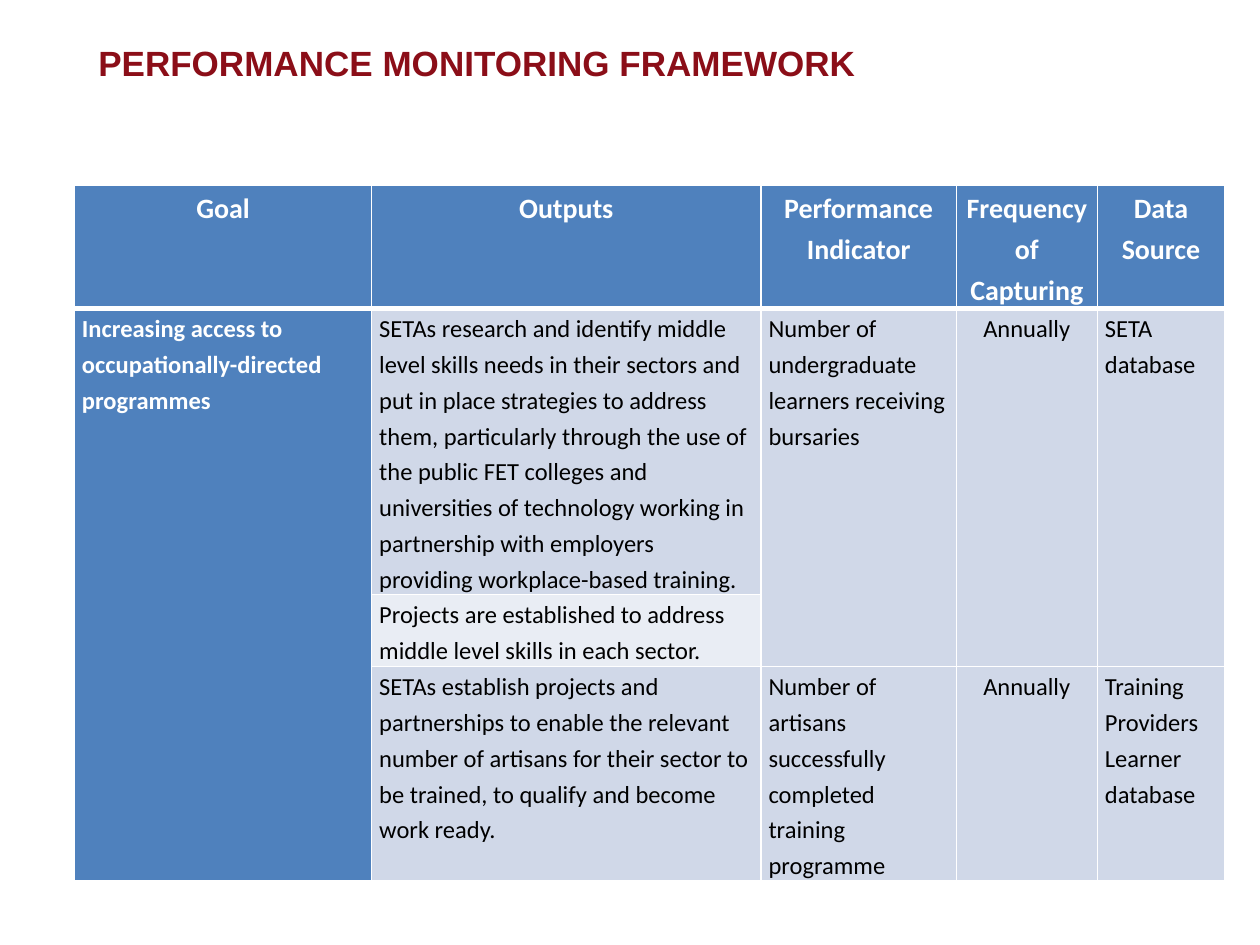
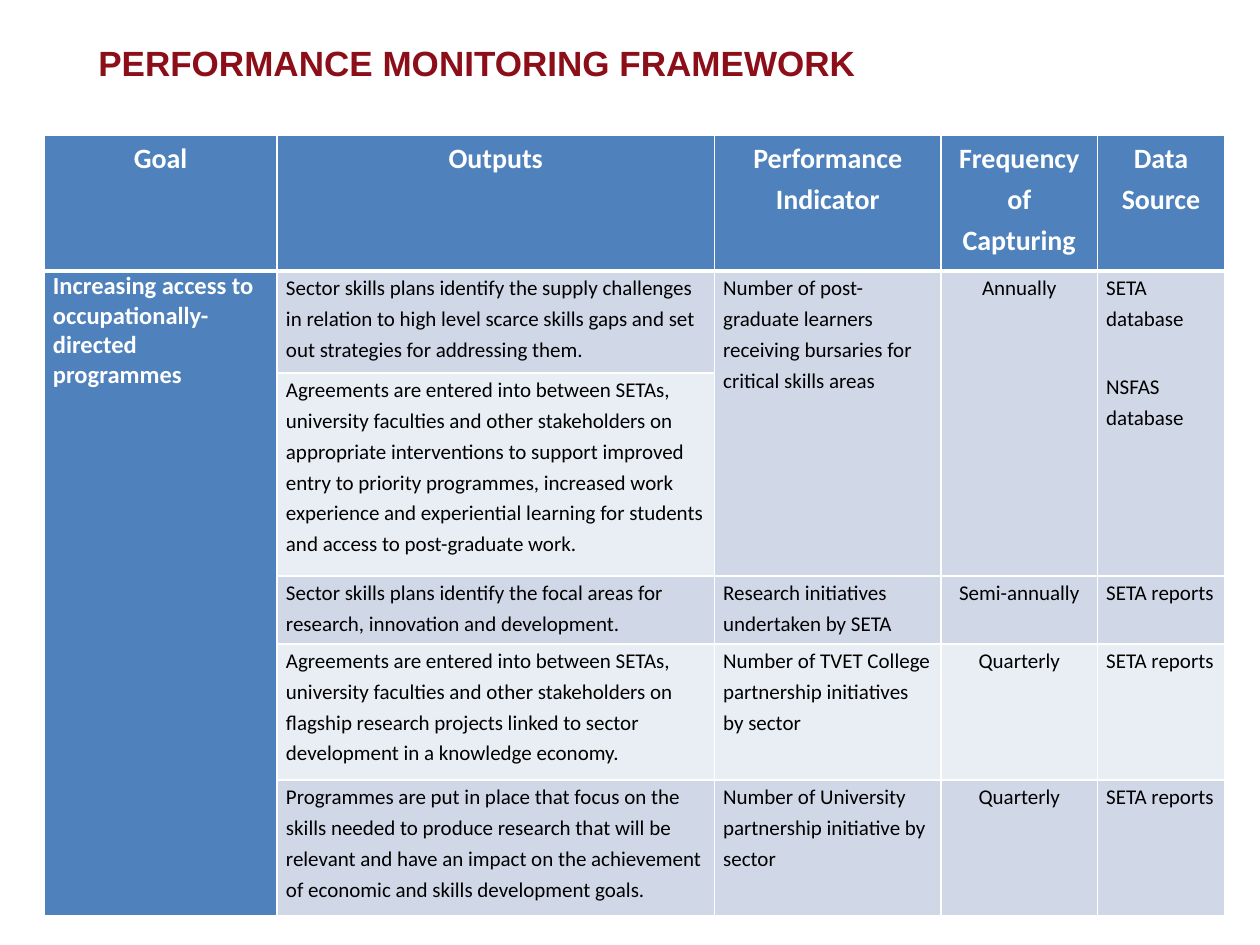
from lxml import etree
from pptx import Presentation, util as u
from pptx.dml.color import RGBColor
from pptx.enum import text
from pptx.oxml import ns

WHITE, BLACK, MAROON, BLUE = "FFFFFF", "000000", "8B0E18", "4F81BD"
BANDS = ["E9EDF4", "D0D8E8"]
TITLE = "PERFORMANCE MONITORING FRAMEWORK"
HEADINGS = ["Goal", "Outputs", "Performance Indicator", "Frequency of Capturing", "Data Source"]
GOAL = "Increasing access to occupationally-directed programmes"
GOAL_COLUMN, FREQUENCY_COLUMN = 0, 3
TITLE_ONLY = 5

ARTISAN_ROWS = [
    [GOAL,
     "SETAs research and identify middle level skills needs in their sectors and put in place "
     "strategies to address them, particularly through the use of the public FET colleges and "
     "universities of technology working in partnership with employers providing "
     "workplace-based training.",
     "Number of undergraduate learners receiving bursaries", "Annually", "SETA database"],
    ["", "Projects are established to address middle level skills in each sector.", "", "", ""],
    ["",
     "SETAs establish projects and partnerships to enable the relevant number of artisans for "
     "their sector to be trained, to qualify and become work ready.",
     "Number of artisans successfully completed training programme", "Annually",
     "Training Providers Learner database"],
]

RESEARCH_ROWS = [
    [GOAL,
     "Sector skills plans identify the supply challenges in relation to high level scarce "
     "skills gaps and set out strategies for addressing them.",
     "Number of post-graduate learners receiving bursaries for critical skills areas",
     "Annually", "SETA database\nNSFAS database"],
    ["",
     "Agreements are entered into between SETAs, university faculties and other stakeholders "
     "on appropriate interventions to support improved entry to priority programmes, increased "
     "work experience and experiential learning for students and access to post-graduate work.",
     "", "", ""],
    ["", "Sector skills plans identify the focal areas for research, innovation and development.",
     "Research initiatives undertaken by SETA", "Semi-annually", "SETA reports"],
    ["",
     "Agreements are entered into between SETAs, university faculties and other stakeholders "
     "on flagship research projects linked to sector development in a knowledge economy.",
     "Number of TVET College partnership initiatives by sector", "Quarterly", "SETA reports"],
    ["",
     "Programmes are put in place that focus on the skills needed to produce research that "
     "will be relevant and have an impact on the achievement of economic and skills "
     "development goals.",
     "Number of University partnership initiative by sector", "Quarterly", "SETA reports"],
]


def color(hex_string):
    return RGBColor.from_string(hex_string)


def style_font(font, name, size, hex_string, bold):
    font.name, font.size, font.bold = name, u.Pt(size), bold
    font.color.rgb = color(hex_string)


def add_title(slide, width):
    title = slide.shapes.title
    title.left, title.top = u.Inches(0.68), u.Inches(0.27)
    title.width, title.height = u.Inches(width), u.Inches(0.45)
    frame = title.text_frame
    frame.text = TITLE
    frame.vertical_anchor = text.MSO_ANCHOR.MIDDLE
    paragraph = frame.paragraphs[0]
    paragraph.alignment = text.PP_ALIGN.LEFT
    style_font(paragraph.runs[0].font, "Arial", 20, MAROON, True)


def set_borders(cell, row):
    properties = cell._tc.get_or_add_tcPr()
    widths = {"a:lnL": 1, "a:lnR": 1, "a:lnT": 3 if row == 1 else 1, "a:lnB": 3 if row == 0 else 1}
    for tag, width in widths.items():
        line = etree.SubElement(properties, ns.qn(tag), w=str(u.Pt(width)))
        fill = etree.SubElement(line, ns.qn("a:solidFill"))
        etree.SubElement(fill, ns.qn("a:srgbClr"), val=WHITE)


def fill_cell(cell, row, column, words, body_size, inset, goal_spacing):
    is_header, is_goal = row == 0, column == GOAL_COLUMN
    is_blue = is_header or is_goal
    set_borders(cell, row)
    cell.fill.solid()
    cell.fill.fore_color.rgb = color(BLUE if is_blue else BANDS[row % 2])
    cell.margin_left = cell.margin_right = u.Inches(0.06 if is_header else inset)
    cell.margin_top = cell.margin_bottom = 0
    cell.text_frame.text = words
    size = 16 if is_header else 14 if is_goal else body_size
    for index, paragraph in enumerate(cell.text_frame.paragraphs):
        centered = is_header or column == FREQUENCY_COLUMN
        paragraph.alignment = text.PP_ALIGN.CENTER if centered else text.PP_ALIGN.LEFT
        paragraph.line_spacing = goal_spacing if is_goal and not is_header else 1.2
        if index:
            paragraph.space_before = u.Pt(21.5)
        for run in paragraph.runs:
            style_font(run.font, "Calibri", size, WHITE if is_blue else BLACK, is_blue)


def add_framework_table(slide, left, top, widths, heights, rows, body_size, inset, goal_spacing):
    table = slide.shapes.add_table(
        len(heights), len(widths), u.Inches(left), u.Inches(top),
        u.Inches(sum(widths)), u.Inches(sum(heights))).table
    for column, width in zip(table.columns, widths):
        column.width = u.Inches(width)
    for table_row, height in zip(table.rows, heights):
        table_row.height = u.Inches(height)
    for row, entries in enumerate([HEADINGS] + rows):
        for column, words in enumerate(entries):
            fill_cell(table.cell(row, column), row, column, words, body_size, inset, goal_spacing)
    table.cell(1, GOAL_COLUMN).merge(table.cell(len(rows), GOAL_COLUMN))
    for column in range(2, len(widths)):
        table.cell(1, column).merge(table.cell(2, column))


def add_framework_slide(presentation, title_width, **table_options):
    slide = presentation.slides.add_slide(presentation.slide_layouts[TITLE_ONLY])
    add_title(slide, title_width)
    add_framework_table(slide, **table_options)


def main():
    presentation = Presentation()
    presentation.slide_width, presentation.slide_height = u.Inches(10), u.Inches(7.5)
    add_framework_slide(
        presentation, 6.6, left=0.59, top=1.47, widths=[2.36, 3.09, 1.55, 1.12, 1.01],
        heights=[0.97, 2.27, 0.57, 1.7], rows=ARTISAN_ROWS,
        body_size=14, inset=0.06, goal_spacing=1.2)
    add_framework_slide(
        presentation, 8.62, left=0.35, top=1.07, widths=[1.85, 3.47, 1.8, 1.24, 1.01],
        heights=[1.08, 0.81, 1.61, 0.54, 1.08, 1.08], rows=RESEARCH_ROWS,
        body_size=12, inset=0.07, goal_spacing=1.0)
    presentation.save("out.pptx")


if __name__ == "__main__":
    main()
